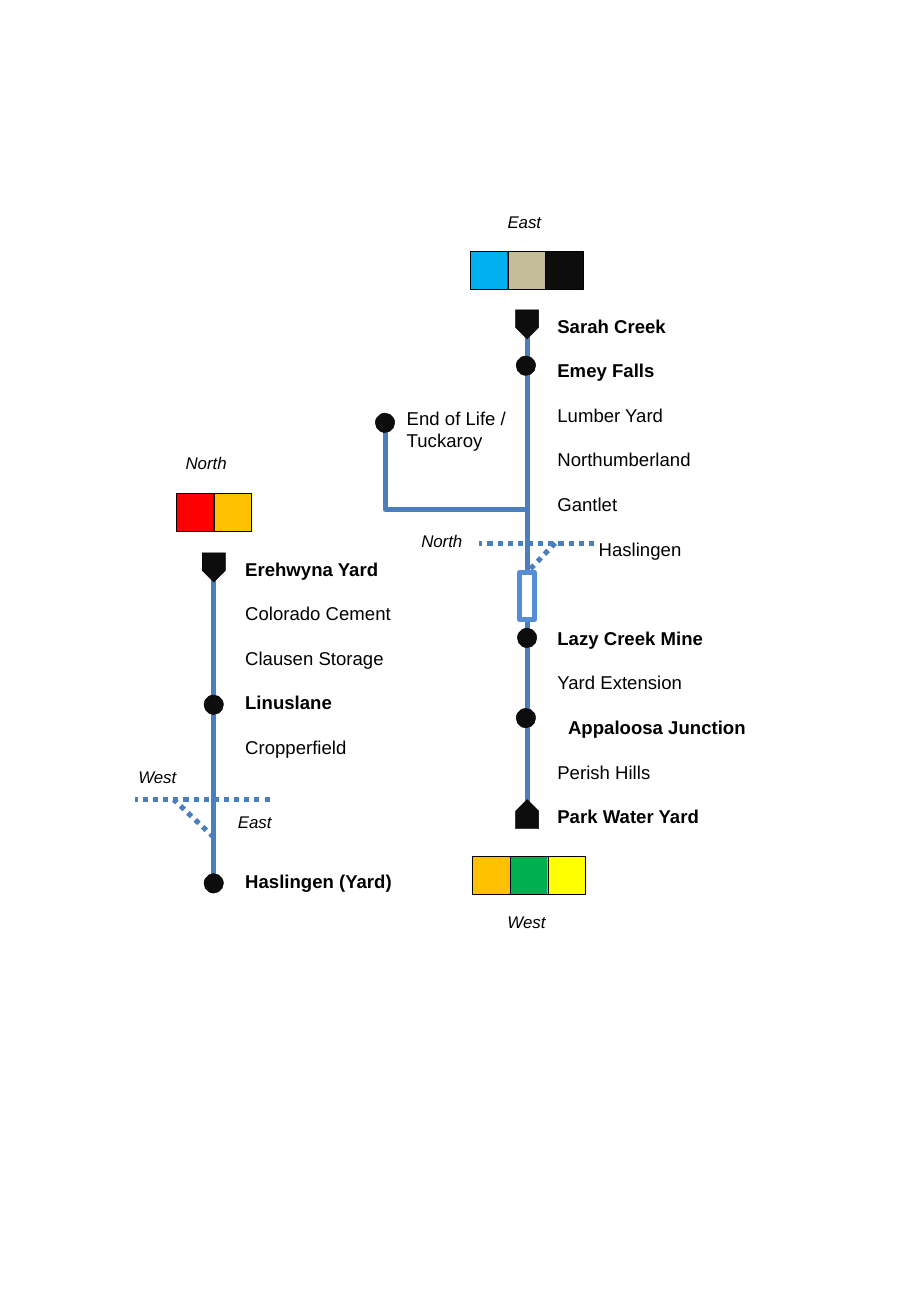
from dataclasses import dataclass

from pptx import Presentation
from pptx.dml.color import RGBColor
from pptx.enum.dml import MSO_LINE
from pptx.enum.shapes import MSO_CONNECTOR, MSO_SHAPE
from pptx.enum.text import PP_ALIGN
from pptx.util import Inches, Pt
from lxml import etree

STRAIGHT, ELBOW = MSO_CONNECTOR.STRAIGHT, MSO_CONNECTOR.ELBOW
OVAL, PLATE, RECT = MSO_SHAPE.OVAL, MSO_SHAPE.PENTAGON, MSO_SHAPE.RECTANGLE
DOTTED = MSO_LINE.ROUND_DOT
LEFT, RIGHT = PP_ALIGN.LEFT, PP_ALIGN.RIGHT
A = "http://schemas.openxmlformats.org/drawingml/2006/main"


@dataclass(frozen=True)
class Theme:
    font: str = "Arial"
    text: str = "000000"
    track: str = "4B7EBC"
    tunnel: str = "558ED5"
    marker: str = "0D0D0D"
    outline: str = "000000"
    white: str = "FFFFFF"
    red: str = "FF0000"
    amber: str = "FFC000"
    blue: str = "00B0F0"
    tan: str = "C4BD97"
    green: str = "00B050"
    yellow: str = "FFFF00"
    station_size: float = 11
    direction_size: float = 10
    line_pitch: float = 13.2
    track_width: float = 3
    outline_width: float = 0.25


T = Theme()
WEST_X, EAST_X = 1.76, 4.34  # the two main lines
DOT, SWATCH = 0.16, 0.31
PLATE_W, PLATE_H = 0.24, 0.19

# (name, bold, lines below the previous name, alignment, indent)
NORTH_STATIONS = [
    ("Erehwyna Yard", True, 0, LEFT, 0),
    ("Colorado Cement", False, 2, LEFT, 0),
    ("Clausen Storage", False, 2, LEFT, 0),
    ("Linuslane", True, 2, LEFT, 0),
    ("Cropperfield", False, 2, LEFT, 0),
    ("Haslingen (Yard)", True, 6, LEFT, 0),
]
EAST_STATIONS = [
    ("Sarah Creek", True, 0, LEFT, 0),
    ("Emey Falls", True, 2, LEFT, 0),
    ("Lumber Yard", False, 2, LEFT, 0),
    ("Northumberland", False, 2, LEFT, 0),
    ("Gantlet", False, 2, LEFT, 0),
    ("Haslingen", False, 2, LEFT, 0.34),
    ("Lazy Creek Mine", True, 4, LEFT, 0),
    ("Yard Extension", False, 2, LEFT, 0),
    ("Appaloosa Junction", True, 2, RIGHT, 0),
    ("Perish Hills", False, 2, LEFT, 0),
    ("Park Water Yard", True, 2, LEFT, 0),
]
BRANCH_STATIONS = [
    ("End of Life /", False, 0, LEFT, 0),
    ("Tuckaroy", False, 1, LEFT, 0),
]


def color(value):
    return RGBColor.from_string(value)


def add_track(s, start, end, kind=STRAIGHT, dash=None):
    c = s.shapes.add_connector(kind, *(Inches(v) for v in (*start, *end)))
    c.line.color.rgb = color(T.track)
    c.line.width = Pt(T.track_width)
    if dash:
        c.line.dash_style = dash
    etree.SubElement(c._element.spPr, f"{{{A}}}effectLst")
    return c


def add_branch(s, start, end):
    """Run along the start's row and turn at the end's column."""
    c = add_track(s, start, end, ELBOW)
    guides = c._element.spPr.find(f"{{{A}}}prstGeom").get_or_add_avLst()
    etree.SubElement(guides, f"{{{A}}}gd", name="adj1", fmla="val 99800")


def add_block(s, kind, x, y, w, h, fill, line=T.outline, width=T.outline_width):
    sp = s.shapes.add_shape(kind, Inches(x), Inches(y), Inches(w), Inches(h))
    sp.shadow.inherit = False
    sp.fill.solid()
    sp.fill.fore_color.rgb = color(fill)
    sp.line.color.rgb = color(line)
    sp.line.width = Pt(width)
    return sp


def add_dot(s, x, y):
    add_block(s, OVAL, x - DOT / 2, y - DOT / 2, DOT, DOT, T.marker)


def add_terminus(s, x, y, rotation):
    sp = add_block(s, PLATE, x - PLATE_W / 2, y - PLATE_H / 2,
                   PLATE_W, PLATE_H, T.marker)
    sp.rotation = rotation


def add_swatches(s, x, y, fills):
    for i, fill in enumerate(fills):
        add_block(s, RECT, x + i * SWATCH, y, SWATCH, SWATCH, fill)


def add_text_box(s, x, y, w, h, wrap=True):
    tf = s.shapes.add_textbox(Inches(x), Inches(y), Inches(w), Inches(h)).text_frame
    tf.word_wrap = wrap
    return tf


def format_font(p, size, bold=False, italic=False):
    for r in p.runs:
        r.font.name = T.font
        r.font.size = Pt(size)
        r.font.bold = bold
        r.font.italic = italic
        r.font.color.rgb = color(T.text)


def add_direction(s, text, x, y, w):
    tf = add_text_box(s, x, y, w, 0.27)
    tf.text = text
    format_font(tf.paragraphs[0], T.direction_size, italic=True)


def add_stations(s, stations, x, y, w, h, wrap=True):
    tf = add_text_box(s, x, y, w, h, wrap)
    tf.text = "\n".join(station[0] for station in stations)
    for p, (_, bold, lines, align, indent) in zip(tf.paragraphs, stations):
        p.alignment = align
        p.line_spacing = Pt(T.line_pitch)
        if lines > 1:
            p.space_before = Pt((lines - 1) * T.line_pitch)
        if indent:
            p._p.get_or_add_pPr().set("marL", str(Inches(indent)))
        format_font(p, T.station_size, bold)


def draw_north_line(s):
    add_track(s, (2.22, 6.58), (1.11, 6.58), dash=DOTTED)
    add_stations(s, NORTH_STATIONS, 1.92, 4.54, 1.88, 3.43)
    add_track(s, (WEST_X, 4.62), (WEST_X, 7.34))
    add_track(s, (WEST_X, 6.89), (1.43, 6.58), dash=DOTTED)
    add_terminus(s, WEST_X, 4.67, 90)
    for y in (5.8, 7.27):
        add_dot(s, WEST_X, y)
    add_direction(s, "North", 1.43, 3.68, 0.63)
    add_direction(s, "West", 1.04, 6.26, 0.57)
    add_direction(s, "East", 1.86, 6.63, 0.51)
    add_swatches(s, 1.45, 4.06, [T.red, T.amber])


def draw_east_line(s):
    add_stations(s, EAST_STATIONS, 4.49, 2.54, 1.75, 4.91)
    add_track(s, (EAST_X, 2.62), (EAST_X, 6.81))
    add_track(s, (4.89, 4.47), (3.94, 4.47), dash=DOTTED)
    add_track(s, (4.57, 4.47), (EAST_X, 4.71), dash=DOTTED)
    add_branch(s, (EAST_X, 4.19), (3.17, 3.48))
    add_stations(s, BRANCH_STATIONS, 3.25, 3.3, 1.02, 0.47, wrap=False)
    add_terminus(s, EAST_X, 2.67, 90)
    add_terminus(s, EAST_X, 6.7, 270)
    for x, y in ((4.33, 3.01), (EAST_X, 5.25), (4.33, 5.91), (3.17, 3.48)):
        add_dot(s, x, y)
    add_block(s, RECT, 4.28, 4.71, 0.12, 0.39, T.white, T.tunnel, T.track_width)
    add_direction(s, "East", 4.08, 1.69, 0.51)
    add_direction(s, "North", 3.37, 4.32, 0.64)
    add_direction(s, "West", 4.08, 7.45, 0.6)
    add_swatches(s, 3.87, 2.07, [T.blue, T.tan, T.marker])
    add_swatches(s, 3.89, 7.05, [T.amber, T.green, T.yellow])


def main():
    prs = Presentation()
    prs.slide_width, prs.slide_height = Inches(7.5), Inches(10.83)
    s = prs.slides.add_slide(prs.slide_layouts[6])
    draw_north_line(s)
    draw_east_line(s)
    prs.save("out.pptx")


if __name__ == "__main__":
    main()
